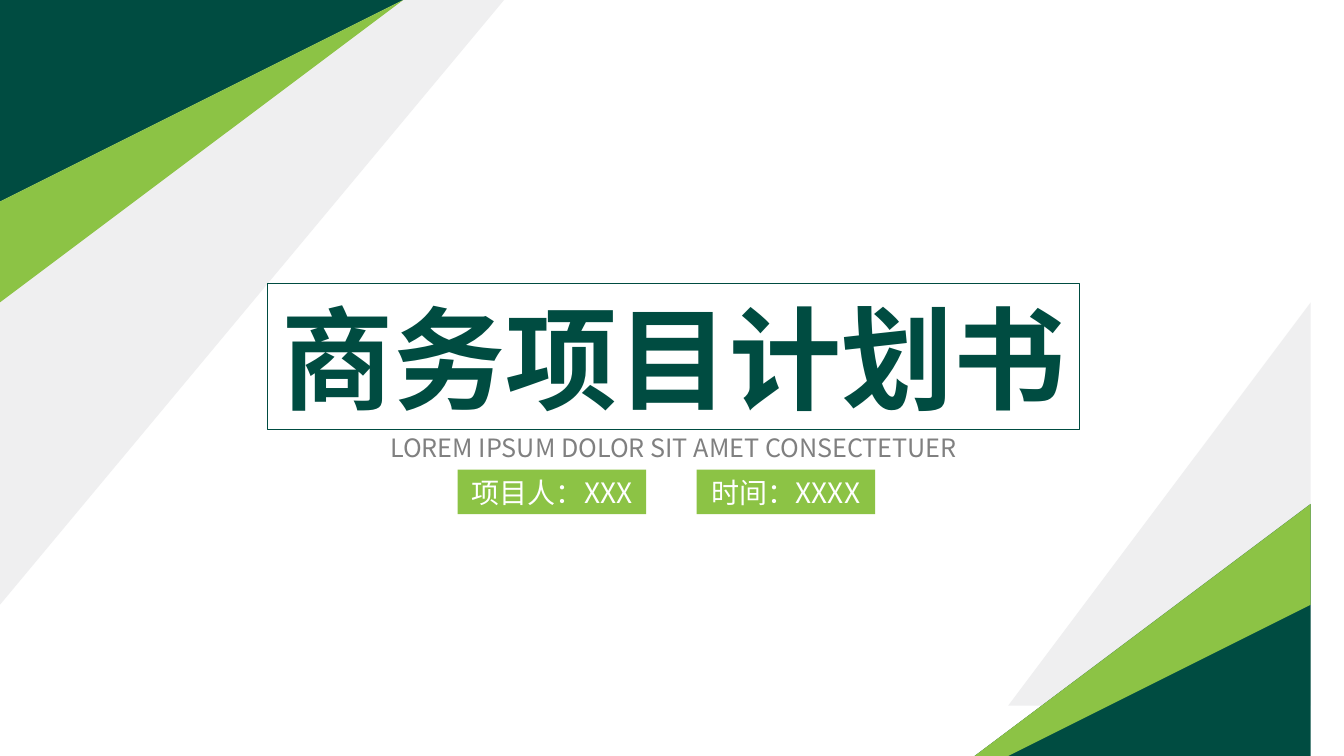
from pptx import Presentation
from pptx import util as u
from pptx.dml.color import RGBColor
from pptx.enum import shapes, text

DARK_GREEN = RGBColor(0x00, 0x4C, 0x41)
LIME = RGBColor(0x8C, 0xC3, 0x45)
PALE = RGBColor(0xEF, 0xEF, 0xF0)
GREY = RGBColor(0x80, 0x80, 0x80)
WHITE = RGBColor(0xFF, 0xFF, 0xFF)


class CoverBuilder:
    font_name = "Noto Sans CJK SC"

    def __init__(self, slide):
        self.slide = slide

    def band(self, points, color):
        builder = self.slide.shapes.build_freeform(*points[0], scale=u.Inches(1))
        builder.add_line_segments(points[1:], close=True)
        shape = builder.convert_to_shape()
        shape.shadow.inherit = False
        shape.fill.solid()
        shape.fill.fore_color.rgb = color
        shape.line.fill.background()

    def label(self, shape, words, size, color, bold=False):
        frame = shape.text_frame
        frame.word_wrap = False
        frame.auto_size = text.MSO_AUTO_SIZE.SHAPE_TO_FIT_TEXT
        paragraph = frame.paragraphs[0]
        paragraph.text = words
        paragraph.alignment = text.PP_ALIGN.CENTER
        paragraph.font.name = self.font_name
        paragraph.font.size = u.Pt(size)
        paragraph.font.bold = bold
        paragraph.font.color.rgb = color

    def caption(self, box, words, size, color):
        shape = self.slide.shapes.add_textbox(*map(u.Inches, box))
        self.label(shape, words, size, color)

    def panel(self, box, words, size, color, fill=None, line=None, bold=False):
        shape = self.slide.shapes.add_shape(
            shapes.MSO_SHAPE.RECTANGLE, *map(u.Inches, box))
        shape.shadow.inherit = False
        if fill is None:
            shape.fill.background()
        else:
            shape.fill.solid()
            shape.fill.fore_color.rgb = fill
        if line is None:
            shape.line.fill.background()
        else:
            shape.line.color.rgb = line
            shape.line.width = u.Pt(0.75)
        self.label(shape, words, size, color, bold)


BANDS = [
    ([(4.21, -0.02), (4.75, -0.02), (-0.03, 5.53), (-0.03, 2.14)], PALE),
    ([(-0.03, -0.05), (3.85, -0.05), (4.3, -0.04), (-0.03, 2.48)], DARK_GREEN),
    ([(4.28, -0.02), (4.33, -0.02), (-0.03, 3.34), (-0.03, 2)], LIME),
    ([(13.35, 2.94), (13.36, 3.12), (13.36, 6.66), (10.16, 6.74)], PALE),
    ([(13.36, 4.52), (13.36, 7.54), (9.69, 7.54), (9.01, 7.51)], DARK_GREEN),
    ([(13.36, 5.36), (13.36, 6.36), (8.95, 7.54), (8.61, 7.54)], LIME),
]
TAGS = [(4.54, 1.87, "项目人：XXX"), (6.91, 1.77, "时间：XXXX")]


def main():
    presentation = Presentation()
    presentation.slide_width = u.Inches(13.33)
    presentation.slide_height = u.Inches(7.5)
    cover = CoverBuilder(presentation.slides.add_slide(presentation.slide_layouts[6]))

    for points, color in BANDS:
        cover.band(points, color)
    cover.panel((2.65, 2.81, 8.06, 1.45), "商务项目计划书", 80, DARK_GREEN,
                line=DARK_GREEN, bold=True)
    cover.caption((3.59, 4.24, 6.18, 0.4),
                  "LOREM IPSUM DOLOR SIT AMET CONSECTETUER", 18, GREY)
    for left, width, words in TAGS:
        cover.panel((left, 4.66, width, 0.44), words, 20, WHITE, fill=LIME)

    presentation.save("out.pptx")


if __name__ == "__main__":
    main()
